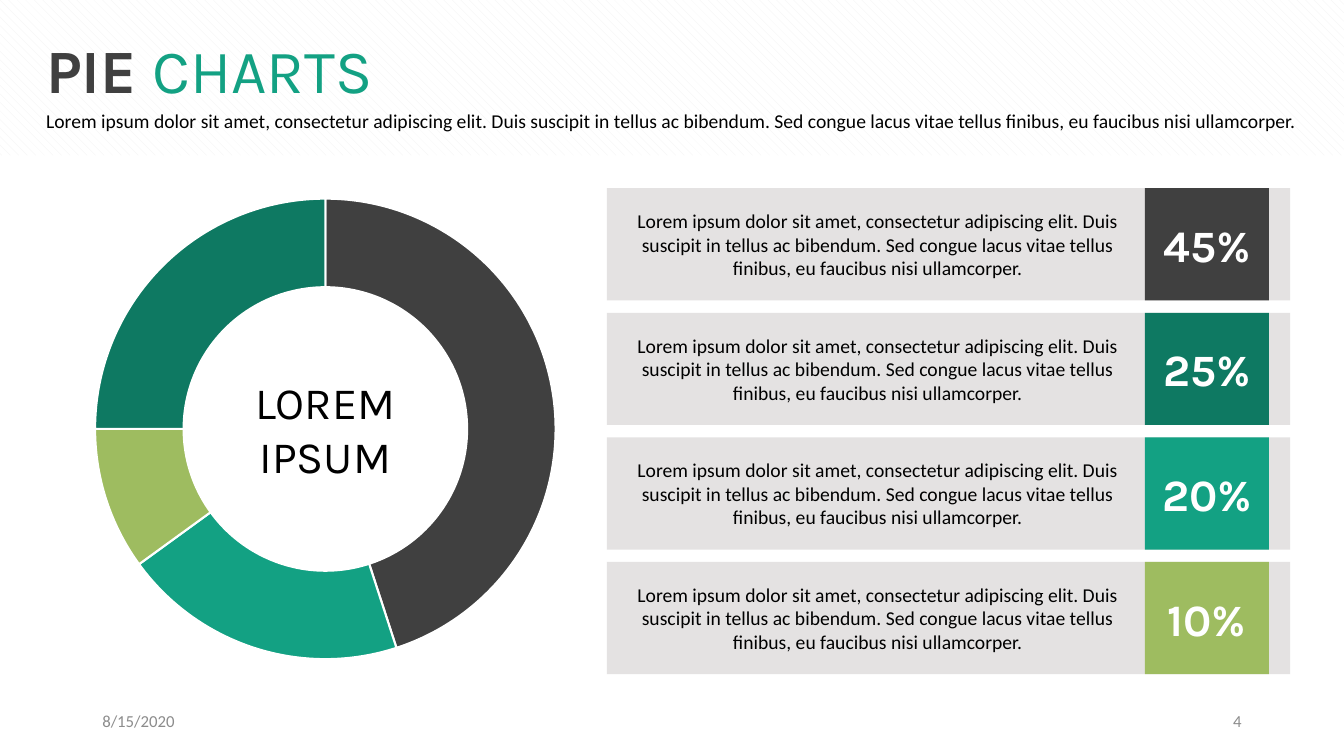
from dataclasses import dataclass

from lxml.etree import SubElement
from pptx import Presentation
from pptx.chart.data import CategoryChartData
from pptx.dml.color import RGBColor
from pptx.enum.chart import XL_CHART_TYPE
from pptx.enum.dml import MSO_PATTERN
from pptx.enum.shapes import MSO_SHAPE
from pptx.enum.text import MSO_ANCHOR, PP_ALIGN
from pptx.oxml.ns import qn
from pptx.util import Pt


@dataclass(frozen=True)
class Theme:
    dark: str = "404040"
    deep: str = "0E7962"
    teal: str = "13A183"
    lime: str = "9EBC60"
    panel: str = "E4E2E2"
    hatch: str = "F2F2F2"
    muted: str = "8C8C8C"
    white: str = "FFFFFF"
    black: str = "000000"
    heading: str = "Karla"
    body: str = "Calibri"
    title_size: int = 44
    label_size: int = 32
    body_size: int = 14
    footer_size: int = 12
    chart_size: int = 10


THEME = Theme()
LOREM = ("Lorem ipsum dolor sit amet, consectetur adipiscing elit. "
         "Duis suscipit in tellus ac bibendum. Sed congue lacus vitae tellus "
         "finibus, eu faucibus nisi ullamcorper.")


def rgb(color):
    return RGBColor.from_string(color)


def add_text(p, text, size=THEME.body_size, color=THEME.black,
             font=THEME.body, bold=False, align=PP_ALIGN.LEFT):
    """Append a formatted run to a paragraph."""
    p.alignment = align
    r = p.add_run()
    r.text = text
    r.font.size = Pt(size)
    r.font.name = font
    r.font.bold = bold
    r.font.color.rgb = rgb(color)


class SlideBuilder:
    def __init__(self, slide, theme):
        self.slide = slide
        self.theme = theme

    def shape(self, kind, box, fill, text=None, **fmt):
        sp = self.slide.shapes.add_shape(kind, *map(Pt, box))
        sp.shadow.inherit = False
        sp.line.fill.background()
        sp.fill.solid()
        sp.fill.fore_color.rgb = rgb(fill)
        if text:
            tf = sp.text_frame
            tf.vertical_anchor = MSO_ANCHOR.MIDDLE
            add_text(tf.paragraphs[0], text, size=self.theme.label_size,
                     font=self.theme.heading, align=PP_ALIGN.CENTER, **fmt)
        return sp

    def hatched_band(self, box):
        sp = self.shape(MSO_SHAPE.RECTANGLE, box, self.theme.white)
        sp.fill.patterned()
        sp.fill.pattern = MSO_PATTERN.DASHED_DOWNWARD_DIAGONAL
        sp.fill.fore_color.rgb = rgb(self.theme.hatch)
        sp.fill.back_color.rgb = rgb(self.theme.white)

    def text_box(self, box, anchor=MSO_ANCHOR.TOP, inset=True):
        """Add a wrapping text box and return its first paragraph."""
        tf = self.slide.shapes.add_textbox(*map(Pt, box)).text_frame
        tf.word_wrap = True
        tf.vertical_anchor = anchor
        if not inset:
            tf.margin_left = tf.margin_right = 0
            tf.margin_top = tf.margin_bottom = 0
        return tf.paragraphs[0]

    def pie(self, box, diameter, values, colors):
        data = CategoryChartData()
        data.categories = [str(i + 1) for i in range(len(values))]
        data.add_series("Series 1", values)
        chart = self.slide.shapes.add_chart(
            XL_CHART_TYPE.PIE, *map(Pt, box), data).chart
        chart.has_title = False
        chart.has_legend = False
        chart.font.size = Pt(self.theme.chart_size)
        chart.font.name = self.theme.body
        chart.font.color.rgb = rgb(self.theme.black)
        plot = chart.plots[0]
        plot.vary_by_categories = True
        for i, color in enumerate(colors):
            fmt = plot.series[0].points[i].format
            fmt.fill.solid()
            fmt.fill.fore_color.rgb = rgb(color)
            fmt.line.color.rgb = rgb(self.theme.white)
            fmt.line.width = Pt(1.5)

        # Centre the pie in the chart frame at a fixed diameter
        area = chart.plots[0]._element.getparent()
        layout = area.find(qn("c:layout"))
        if layout is None:
            layout = SubElement(area, qn("c:layout"))
            area.insert(0, layout)
        manual = SubElement(layout, qn("c:manualLayout"))
        w, h = diameter / box[2], diameter / box[3]
        settings = {"layoutTarget": "inner", "xMode": "edge", "yMode": "edge",
                    "x": (1 - w) / 2, "y": (1 - h) / 2, "w": w, "h": h}
        for name, value in settings.items():
            SubElement(manual, qn(f"c:{name}")).set("val", str(value))

    def percent_row(self, top, value, color):
        height = 80.2
        self.shape(MSO_SHAPE.RECTANGLE, (433.5, top, 488, height),
                   self.theme.panel)
        self.shape(MSO_SHAPE.RECTANGLE, (817.8, top, 88.6, height), color,
                   f"{value}%", color=self.theme.white, bold=True)
        p = self.text_box((442, top + 14.6, 370, 51), MSO_ANCHOR.MIDDLE,
                          inset=False)
        add_text(p, LOREM, align=PP_ALIGN.CENTER)


def main():
    prs = Presentation()
    prs.slide_width, prs.slide_height = Pt(960), Pt(540)
    s = SlideBuilder(prs.slides.add_slide(prs.slide_layouts[6]), THEME)

    # Header
    s.hatched_band((0, 0, 960, 111))
    p = s.text_box((33, 23, 894, 53.3), inset=False)
    title = {"size": THEME.title_size, "font": THEME.heading}
    add_text(p, "PIE ", color=THEME.dark, bold=True, **title)
    add_text(p, "CHARTS", color=THEME.teal, **title)
    add_text(s.text_box((33, 78, 894, 17), inset=False), LOREM)

    # Footer
    footer = {"size": THEME.footer_size, "color": THEME.muted}
    add_text(s.text_box((66, 500.5, 216, 28.8), MSO_ANCHOR.MIDDLE),
             "8/15/2020", **footer)
    add_text(s.text_box((678, 500.5, 216, 28.8), MSO_ANCHOR.MIDDLE),
             "4", align=PP_ALIGN.RIGHT, **footer)

    # Pie with a round centre label
    s.pie((38.4, 131.4, 388, 350), 329, (45, 20, 10, 25),
          (THEME.dark, THEME.teal, THEME.lime, THEME.deep))
    s.shape(MSO_SHAPE.OVAL, (130.4, 204.4, 204, 204), THEME.white,
            "LOREM IPSUM", color=THEME.black)

    # Percentage rows
    rows = ((45, THEME.dark), (25, THEME.deep),
            (20, THEME.teal), (10, THEME.lime))
    for i, (value, color) in enumerate(rows):
        s.percent_row(134.4 + i * 89, value, color)

    prs.save("out.pptx")


if __name__ == "__main__":
    main()
